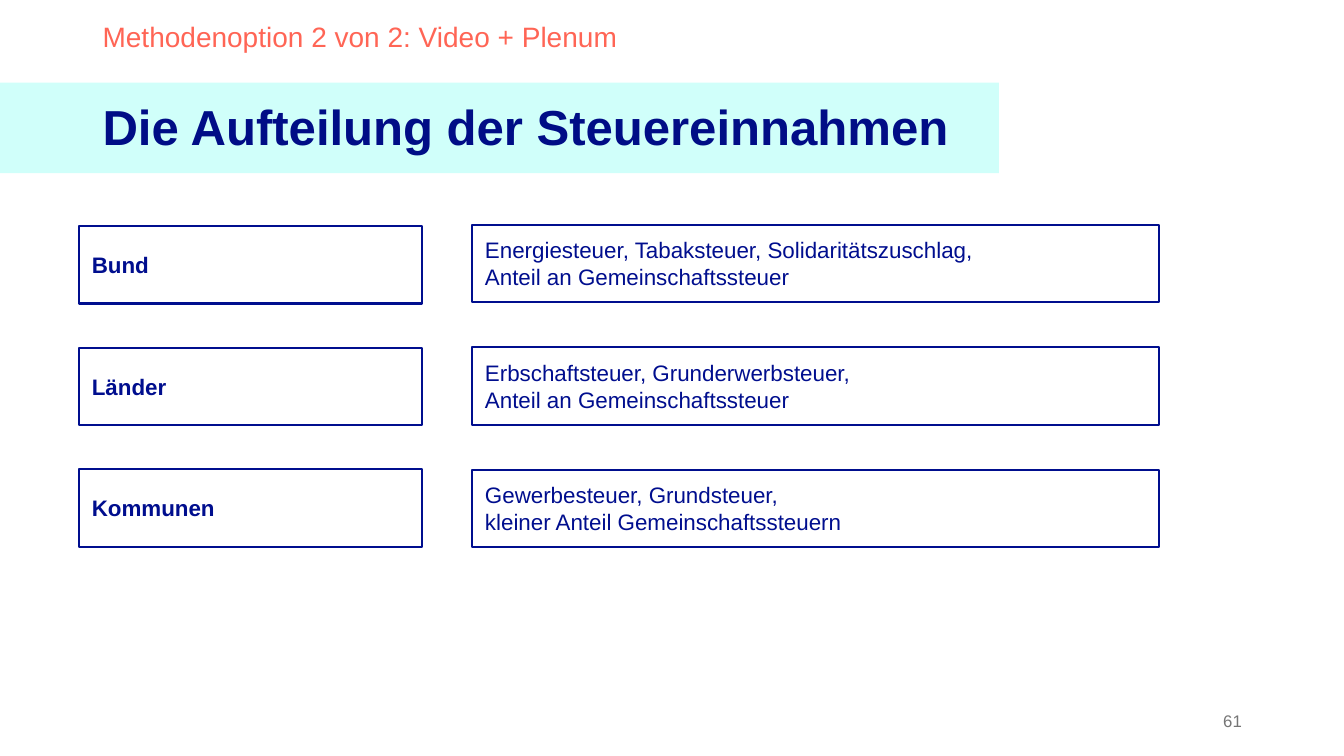
from pptx import Presentation, util as u
from pptx.dml import color
from pptx.enum import shapes, text

NAVY = "000E8E"


def rgb(value):
    return color.RGBColor.from_string(value)


class Canvas:
    font = "Arial"
    border = 1.5

    def __init__(self, slide):
        self.slide = slide

    def set_words(self, frame, words, size, ink, bold=False, spacing=None,
                  align=text.PP_ALIGN.LEFT, anchor=text.MSO_ANCHOR.MIDDLE,
                  left=7.2, right=7.2):
        frame.word_wrap = True
        frame.vertical_anchor = anchor
        frame.margin_left, frame.margin_right = u.Pt(left), u.Pt(right)
        frame.margin_top = frame.margin_bottom = u.Pt(3.6)
        frame.text = words
        for paragraph in frame.paragraphs:
            paragraph.alignment = align
            paragraph.line_spacing = spacing
            for run in paragraph.runs:
                run.font.name = self.font
                run.font.size = u.Pt(size)
                run.font.bold = bold
                run.font.color.rgb = rgb(ink)

    def label(self, place, words, size, ink, **style):
        box = self.slide.shapes.add_textbox(*map(u.Pt, place))
        self.set_words(box.text_frame, words, size, ink, **style)

    def rectangle(self, place, fill):
        shape = self.slide.shapes.add_shape(
            shapes.MSO_SHAPE.RECTANGLE, *map(u.Pt, place))
        shape.shadow.inherit = False
        shape.fill.solid()
        shape.fill.fore_color.rgb = rgb(fill)
        shape.line.fill.background()
        return shape

    def card(self, place, words, bold):
        shape = self.rectangle(place, "FFFFFF")
        shape.line.color.rgb = rgb(NAVY)
        shape.line.width = u.Pt(self.border)
        self.set_words(shape.text_frame, words, 16, NAVY, bold=bold,
                       left=9.4, right=5.8)

    def column(self, left, top, width, pitch, entries, bold=False):
        for row, words in enumerate(entries):
            self.card((left, top + row * pitch, width, 55.4), words, bold)


def main():
    deck = Presentation()
    deck.slide_width, deck.slide_height = u.Pt(960), u.Pt(540)
    canvas = Canvas(deck.slides.add_slide(deck.slide_layouts[6]))

    canvas.rectangle((0, 59, 713.5, 64.8), "D0FFFA")
    canvas.label((66.2, 13, 470.9, 38.2),
                 "Methodenoption 2 von 2: Video + Plenum", 20, "FF6555",
                 spacing=0.9, anchor=text.MSO_ANCHOR.TOP)
    canvas.label((66.2, 61.9, 680.4, 61.2),
                 "Die Aufteilung der Steuereinnahmen", 35.1, "000D86",
                 bold=True, spacing=0.9)

    taxes = {
        "Bund": "Energiesteuer, Tabaksteuer, Solidaritätszuschlag,\v"
                "Anteil an Gemeinschaftssteuer",
        "Länder": "Erbschaftsteuer, Grunderwerbsteuer,\v"
                  "Anteil an Gemeinschaftssteuer",
        "Kommunen": "Gewerbesteuer, Grundsteuer,\v"
                    "kleiner Anteil Gemeinschaftssteuern",
    }
    canvas.column(56.2, 161.5, 245.5, 86.8, taxes, bold=True)
    canvas.column(337, 160.5, 491, 87.5, taxes.values())

    canvas.label((678.2, 500.4, 216, 28.8), "61", 12, "757575",
                 align=text.PP_ALIGN.RIGHT)
    deck.save("out.pptx")


if __name__ == "__main__":
    main()
